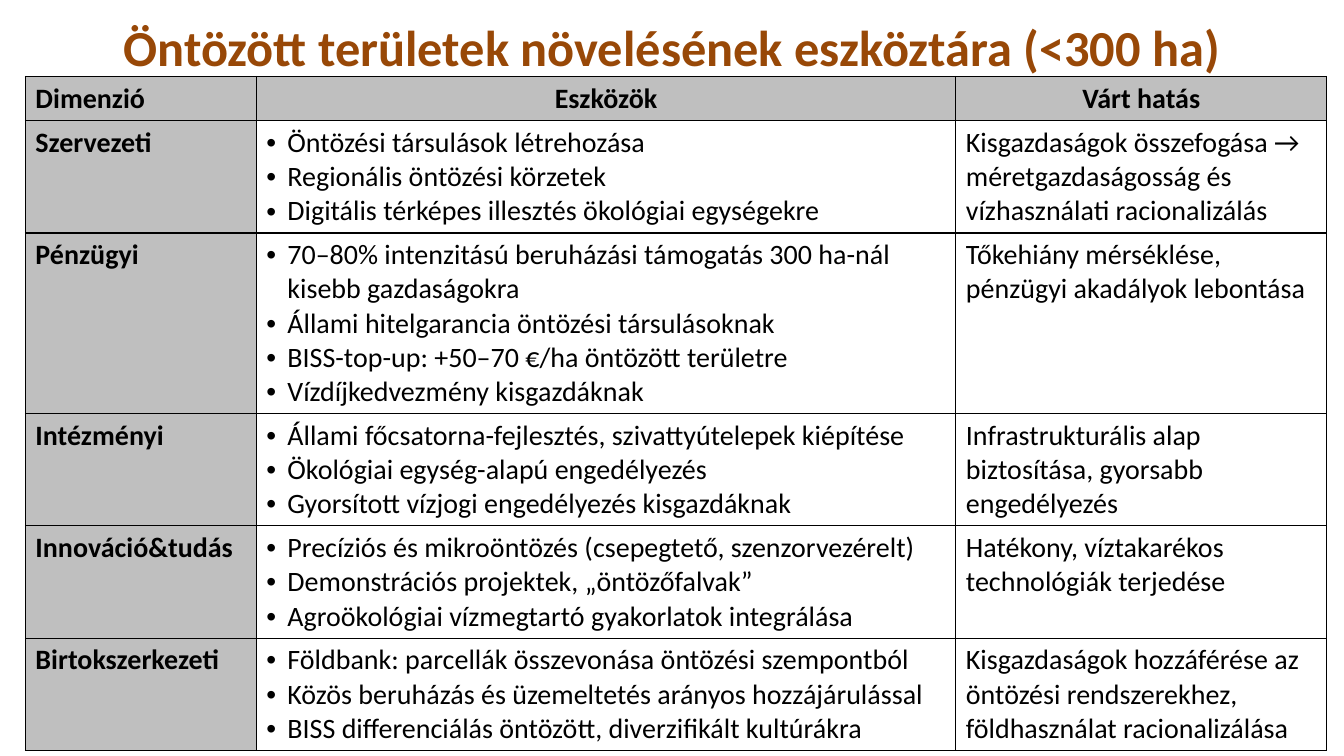
from lxml import etree
from pptx import Presentation
from pptx.dml.color import RGBColor
from pptx.enum.text import MSO_ANCHOR, PP_ALIGN
from pptx.oxml.ns import qn
from pptx.util import Cm, Pt

LEFT, CENTER = PP_ALIGN.LEFT, PP_ALIGN.CENTER
MIDDLE = MSO_ANCHOR.MIDDLE
FONT = "Calibri"
COLORS = {"title": "984807", "text": "000000", "border": "000000", "label": "BFBFBF"}
BULLET_INDENT = Cm(0.53)
LINE_HEIGHT, CELL_PADDING = 0.86, 0.25

TITLE = "Öntözött területek növelésének eszköztára (<300 ha)"
HEADERS = ["Dimenzió", "Eszközök", "Várt hatás"]
COLUMN_WIDTHS = [5.82, 17.63, 9.35]
DIMENSIONS = [
    ("Szervezeti", 3,
     ["Öntözési társulások létrehozása",
      "Regionális öntözési körzetek",
      "Digitális térképes illesztés ökológiai egységekre"],
     "Kisgazdaságok összefogása → méretgazdaságosság és vízhasználati racionalizálás"),
    ("Pénzügyi", 5,
     ["70–80% intenzitású beruházási támogatás 300 ha-nál kisebb gazdaságokra",
      "Állami hitelgarancia öntözési társulásoknak",
      "BISS-top-up: +50–70 €/ha öntözött területre",
      "Vízdíjkedvezmény kisgazdáknak"],
     "Tőkehiány mérséklése, pénzügyi akadályok lebontása"),
    ("Intézményi", 3,
     ["Állami főcsatorna-fejlesztés, szivattyútelepek kiépítése",
      "Ökológiai egység-alapú engedélyezés",
      "Gyorsított vízjogi engedélyezés kisgazdáknak"],
     "Infrastrukturális alap biztosítása, gyorsabb engedélyezés"),
    ("Innováció&tudás", 3,
     ["Precíziós és mikroöntözés (csepegtető, szenzorvezérelt)",
      "Demonstrációs projektek, „öntözőfalvak”",
      "Agroökológiai vízmegtartó gyakorlatok integrálása"],
     "Hatékony, víztakarékos technológiák terjedése"),
    ("Birtokszerkezeti", 3,
     ["Földbank: parcellák összevonása öntözési szempontból",
      "Közös beruházás és üzemeltetés arányos hozzájárulással",
      "BISS differenciálás öntözött, diverzifikált kultúrákra"],
     "Kisgazdaságok hozzáférése az öntözési rendszerekhez, földhasználat racionalizálása"),
]


def add_bullet(p):
    pPr = p._p.get_or_add_pPr()
    pPr.set("marL", str(BULLET_INDENT))
    pPr.set("indent", str(-BULLET_INDENT))
    etree.SubElement(pPr, qn("a:buFont"), typeface="Arial")
    etree.SubElement(pPr, qn("a:buChar"), char="•")


def write(tf, text, size=20, color="text", bold=False, align=LEFT, bullets=False):
    lines = text if bullets else [text]
    for i, line in enumerate(lines):
        p = tf.paragraphs[0] if i == 0 else tf.add_paragraph()
        p.alignment = align
        if bullets:
            add_bullet(p)
        r = p.add_run()
        r.text = line
        r.font.name = FONT
        r.font.size = Pt(size)
        r.font.bold = bold
        r.font.color.rgb = RGBColor.from_string(COLORS[color])


def add_borders(cell):
    tcPr = cell._tc.get_or_add_tcPr()
    for side in ("lnL", "lnR", "lnT", "lnB"):
        ln = etree.SubElement(tcPr, qn(f"a:{side}"), w=str(Pt(1)))
        fill = etree.SubElement(ln, qn("a:solidFill"))
        etree.SubElement(fill, qn("a:srgbClr"), val=COLORS["border"])


def format_cell(cell, text, label=False, **fmt):
    add_borders(cell)
    if label:
        cell.fill.solid()
        cell.fill.fore_color.rgb = RGBColor.from_string(COLORS["label"])
    else:
        cell.fill.background()
    write(cell.text_frame, text, bold=label, **fmt)


def add_title(s, left, top, width, height):
    tf = s.shapes.add_textbox(left, top, width, height).text_frame
    tf.word_wrap = True
    tf.vertical_anchor = MIDDLE
    write(tf, TITLE, size=36, color="title", bold=True, align=CENTER)


def add_tools_table(s, left, top, width):
    line_counts = [1] + [lines for _, lines, _, _ in DIMENSIONS]
    heights = [Cm(n * LINE_HEIGHT + CELL_PADDING) for n in line_counts]
    table = s.shapes.add_table(len(heights), len(HEADERS), left, top, width, sum(heights)).table
    table.first_row = table.horz_banding = False
    for column, share in zip(table.columns, COLUMN_WIDTHS):
        column.width = int(width * share / sum(COLUMN_WIDTHS))
    for row, height in zip(table.rows, heights):
        row.height = height
    for col, header in enumerate(HEADERS):
        format_cell(table.cell(0, col), header, label=True, align=CENTER if col else LEFT)
    for row, (name, _, tools, effect) in enumerate(DIMENSIONS, 1):
        format_cell(table.cell(row, 0), name, label=True)
        format_cell(table.cell(row, 1), tools, bullets=True)
        format_cell(table.cell(row, 2), effect)


def main():
    prs = Presentation()
    prs.slide_width, prs.slide_height = Cm(33.87), Cm(19.05)
    s = prs.slides.add_slide(prs.slide_layouts[6])
    add_title(s, 0, Cm(0.18), prs.slide_width, Cm(1.96))
    add_tools_table(s, Cm(0.64), Cm(1.93), Cm(32.8))
    prs.save("out.pptx")


if __name__ == "__main__":
    main()
